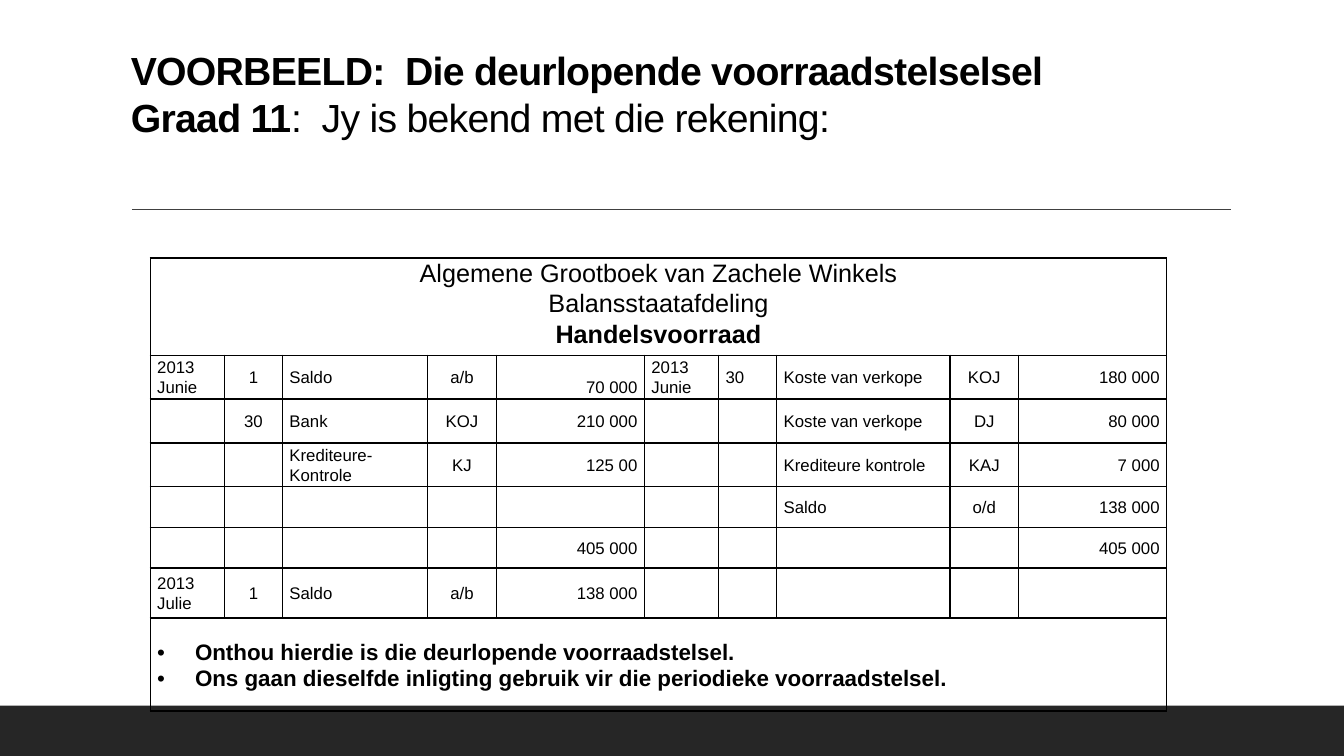
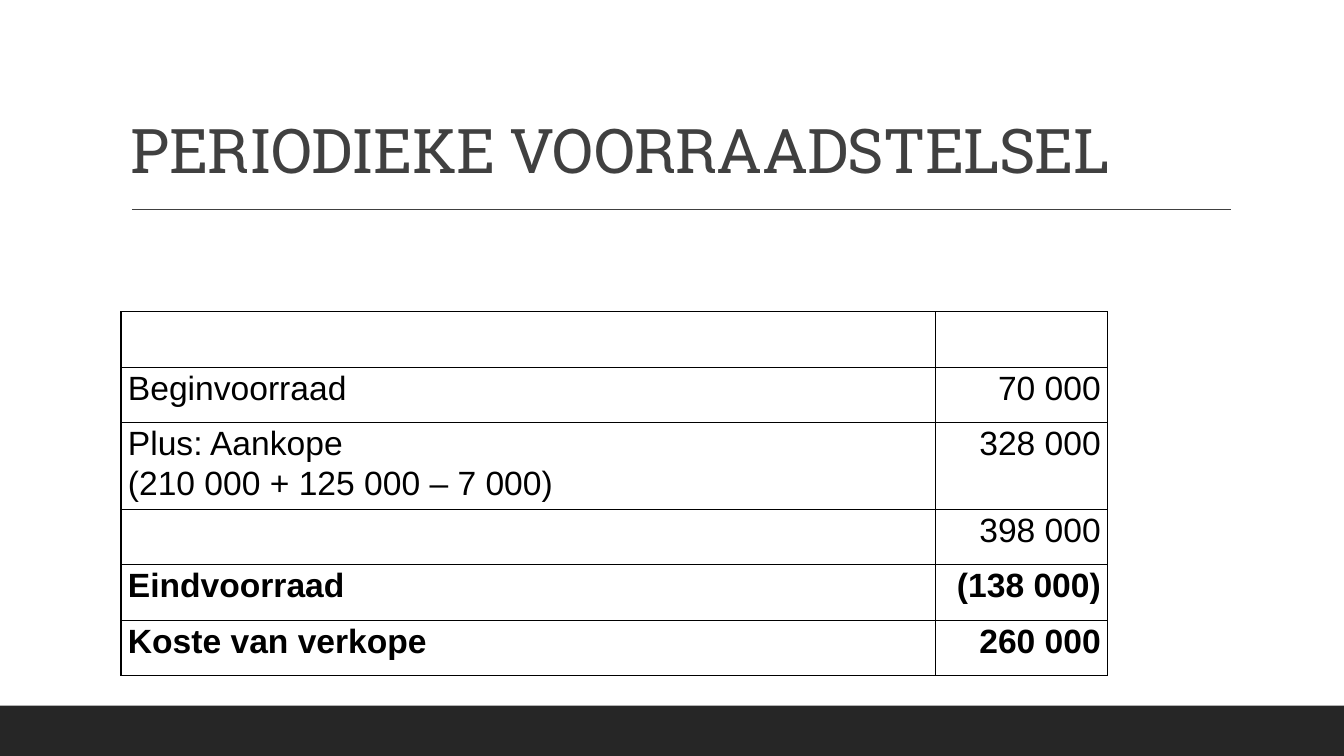
from lxml import etree
from pptx import Presentation
from pptx.dml.color import RGBColor
from pptx.enum.shapes import MSO_CONNECTOR, MSO_SHAPE
from pptx.enum.text import MSO_ANCHOR, PP_ALIGN
from pptx.oxml.ns import qn
from pptx.util import Pt

LEFT, MID, RIGHT = PP_ALIGN.LEFT, PP_ALIGN.CENTER, PP_ALIGN.RIGHT
TOP, CENTRE, BOTTOM = MSO_ANCHOR.TOP, MSO_ANCHOR.MIDDLE, MSO_ANCHOR.BOTTOM
LINE, RECT = MSO_CONNECTOR.STRAIGHT, MSO_SHAPE.RECTANGLE

HEX = {"band": "262626", "rule": "404040", "ink": "000000"}
RGB = {name: RGBColor.from_string(code) for name, code in HEX.items()}
SIDES = ("L", "R", "T", "B")


def write(cell, text, size, align=LEFT, anchor=TOP, bold=False):
    """Fill a cell with Arial text, one paragraph per line."""
    cell.vertical_anchor = anchor
    if not text:
        return
    cell.text_frame.text = text
    for para in cell.text_frame.paragraphs:
        para.alignment = align
        para.line_spacing = 1.07
        font = para.runs[0].font
        font.name, font.size, font.bold = "Arial", Pt(size), bold
        font.color.rgb = RGB["ink"]


def grid(slide, left, top, widths, heights, bare=0):
    """Add a plain ruled table; the first bare rows keep only a bottom line."""
    frame = slide.shapes.add_table(len(heights), len(widths), Pt(left), Pt(top),
                                   Pt(sum(widths)), Pt(sum(heights)))
    table = frame.table
    table.first_row = table.horz_banding = False
    for col, width in zip(table.columns, widths):
        col.width = Pt(width)
    for r, height in enumerate(heights):
        table.rows[r].height = Pt(height)
        for cell in table.rows[r].cells:
            cell.margin_left = cell.margin_right = Pt(5)
            cell.margin_top = cell.margin_bottom = 0
            cell.fill.background()
            props = cell._tc.get_or_add_tcPr()
            for i, side in enumerate(SIDES):
                edge = etree.Element(qn("a:ln" + side), w=str(Pt(1)))
                if r >= bare or side == "B":
                    paint = etree.SubElement(edge, qn("a:solidFill"))
                    etree.SubElement(paint, qn("a:srgbClr"), val=HEX["ink"])
                else:
                    etree.SubElement(edge, qn("a:noFill"))
                props.insert(i, edge)
    return table


deck = Presentation()
deck.slide_width, deck.slide_height = Pt(960), Pt(540)

# Shared frame: footer band, rule and title; each run is (text, bold)
TITLES = [
    {"lines": [[("VOORBEELD:  Die deurlopende voorraadstelselsel", True)],
               [("Graad 11", True), (":  Jy is bekend met die rekening:", False)]],
     "font": "Arial", "size": 28, "tone": "ink", "pitch": Pt(33.5), "foot": 36.5},
    {"lines": [[("PERIODIEKE VOORRAADSTELSEL", False)]],
     "font": "Roboto Slab", "size": 44, "tone": "rule", "pitch": 0.9, "foot": 3.6},
]
slides = []
for title in TITLES:
    slide = deck.slides.add_slide(deck.slide_layouts[6])
    slides.append(slide)

    band = slide.shapes.add_shape(RECT, 0, Pt(504), Pt(960), Pt(36))
    band.shadow.inherit = False
    band.fill.solid()
    band.fill.fore_color.rgb = RGB["band"]
    band.line.fill.background()

    rule = slide.shapes.add_connector(LINE, Pt(94.3), Pt(149.6), Pt(879), Pt(149.6))
    rule.line.color.rgb = RGB["rule"]
    rule.line.width = Pt(1)
    etree.SubElement(rule._element.spPr, qn("a:effectLst"))

    box = slide.shapes.add_textbox(Pt(86.4), Pt(22.3), Pt(792), Pt(114.5))
    text = box.text_frame
    text.word_wrap = True
    text.vertical_anchor = BOTTOM
    text.margin_bottom = Pt(title["foot"])
    for i, line in enumerate(title["lines"]):
        para = text.add_paragraph() if i else text.paragraphs[0]
        para.line_spacing = title["pitch"]
        for words, bold in line:
            run = para.add_run()
            run.text = words
            run.font.name, run.font.size = title["font"], Pt(title["size"])
            run.font.bold = bold
            run.font.color.rgb = RGB[title["tone"]]
            run._r.get_or_add_rPr().set("spc", "-50")

# Slide 1: ledger account, debit and credit sides
ENTRIES = [
    ["2013\nJunie", "1", "Saldo", "a/b", "70 000",
     "2013\nJunie", "30", "Koste van verkope", "KOJ", "180 000"],
    ["", "30", "Bank", "KOJ", "210 000", "", "", "Koste van verkope", "DJ", "80 000"],
    ["", "", "Krediteure-Kontrole", "KJ", "125 00",
     "", "", "Krediteure kontrole", "KAJ", "7 000"],
    ["", "", "", "", "", "", "", "Saldo", "o/d", "138 000"],
    ["", "", "", "", "405 000", "", "", "", "", "405 000"],
    ["2013\nJulie", "1", "Saldo", "a/b", "138 000", "", "", "", "", ""],
]
ALIGN = [LEFT, MID, LEFT, MID, RIGHT, LEFT, LEFT, LEFT, MID, RIGHT]
ledger = grid(slides[0], 107.3, 184.3,
              [53, 41.5, 103.8, 49, 105.8, 53, 41.5, 123.8, 49, 105.8],
              [64.3, 31.4, 31.4, 31.4, 29, 29, 35.7, 66.4])
for r in (0, 7):
    ledger.cell(r, 0).merge(ledger.cell(r, 9))

head = ledger.cell(0, 0)
write(head, "Algemene Grootboek van Zachele Winkels\nBalansstaatafdeling\nHandelsvoorraad",
      18, MID)
head.text_frame.paragraphs[2].runs[0].font.bold = True

for r, entry in enumerate(ENTRIES, 1):
    for c, words in enumerate(entry):
        write(ledger.cell(r, c), words, 12, ALIGN[c], CENTRE)
opening = ledger.cell(1, 4)
opening.vertical_anchor = BOTTOM
opening.margin_bottom = Pt(1.5)

# Bulleted remarks in the last row
notes = ledger.cell(7, 0)
notes.margin_top = Pt(14.5)
write(notes, "Onthou hierdie is die deurlopende voorraadstelsel.\n"
      "Ons gaan dieselfde inligting gebruik vir die periodieke voorraadstelsel.",
      16, bold=True)
for para in notes.text_frame.paragraphs:
    props = para._p.get_or_add_pPr()
    props.set("marL", str(Pt(27)))
    props.set("indent", str(-Pt(27)))
    etree.SubElement(props, qn("a:buFont"), typeface="Arial")
    etree.SubElement(props, qn("a:buChar"), char="•")

# Slide 2: cost of sales
COSTS = [
    ("Beginvoorraad", "70 000", False),
    ("Plus: Aankope\n(210 000 + 125 000 – 7 000)", "328 000", False),
    ("", "398 000", False),
    ("Eindvoorraad", "(138 000)", True),
    ("Koste van verkope", "260 000", True),
]
ROW = 39.7
costs = grid(slides[1], 86.4, 183, [581.8, 123.1],
             [ROW, ROW, ROW, 57, ROW, ROW, ROW], bare=1)
costs.cell(0, 0).merge(costs.cell(0, 1))
for r, (label, amount, bold) in enumerate(COSTS, 2):
    write(costs.cell(r, 0), label, 24, bold=bold)
    write(costs.cell(r, 1), amount, 24, RIGHT, bold=bold)

deck.save("out.pptx")
